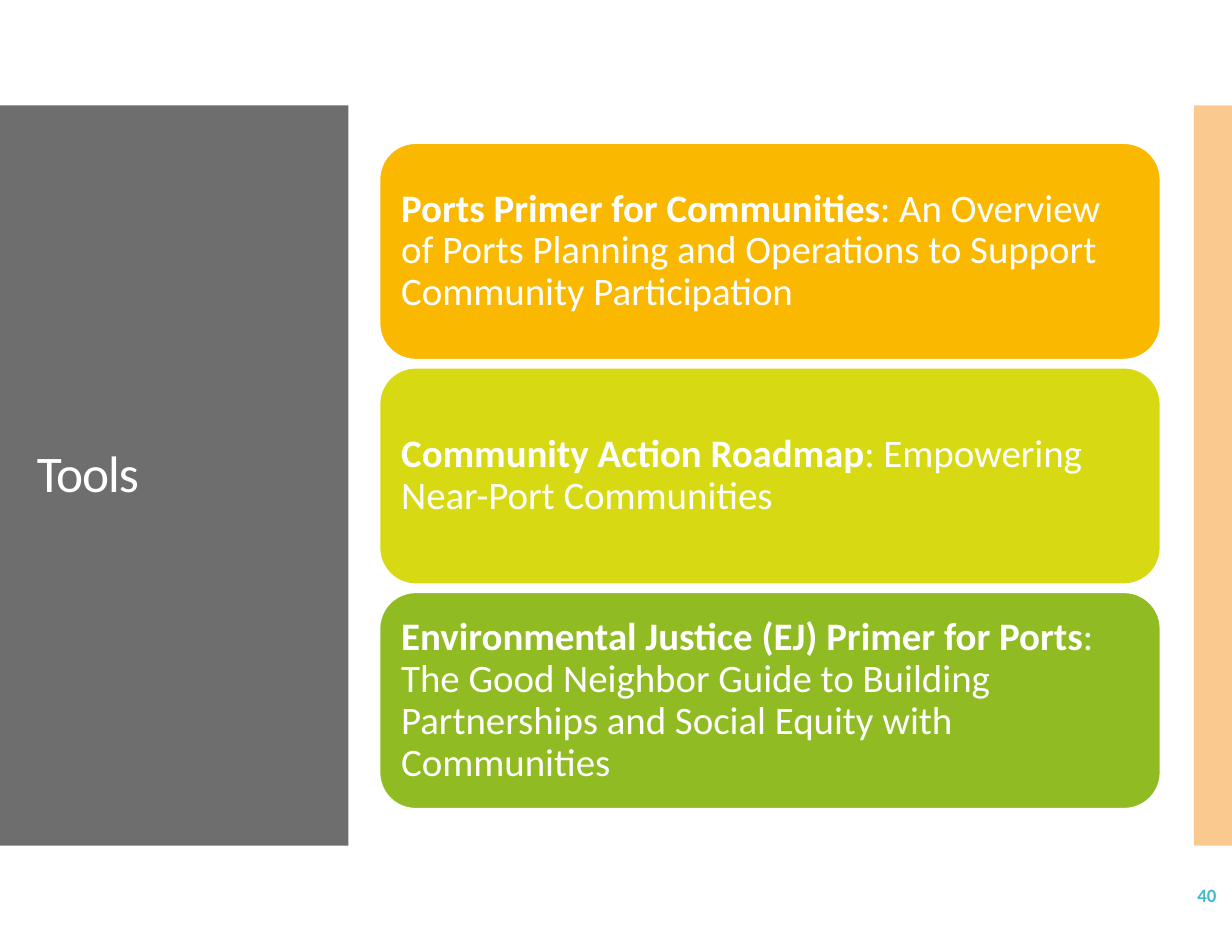
from lxml import etree
from pptx import Presentation
from pptx.dml.color import RGBColor
from pptx.enum.shapes import MSO_SHAPE
from pptx.enum.text import MSO_ANCHOR, PP_ALIGN
from pptx.oxml.ns import qn
from pptx.util import Inches, Pt

RECTANGLE, ROUNDED = MSO_SHAPE.RECTANGLE, MSO_SHAPE.ROUNDED_RECTANGLE
MIDDLE = MSO_ANCHOR.MIDDLE
LEFT, RIGHT = PP_ALIGN.LEFT, PP_ALIGN.RIGHT

WHITE = RGBColor(0xFF, 0xFF, 0xFF)
GREY = RGBColor(0x6E, 0x6E, 0x6E)
ORANGE = RGBColor(0xF7, 0x94, 0x21)
TEAL = RGBColor(0x40, 0xBA, 0xD2)
AMBER = RGBColor(0xFA, 0xB9, 0x00)
LIME = RGBColor(0xD7, 0xD9, 0x13)
GREEN = RGBColor(0x90, 0xBB, 0x23)
FONT = "Calibri"

TITLE = "Tools"
PAGE_NUMBER = "40"
TOOLS = [
    ("Ports Primer for Communities",
     ": An Overview of Ports Planning and Operations to Support "
     "Community Participation", AMBER),
    ("Community Action Roadmap",
     ": Empowering Near-Port Communities", LIME),
    ("Environmental Justice (EJ) Primer for Ports",
     ": The Good Neighbor Guide to Building Partnerships and Social "
     "Equity with Communities", GREEN),
]

SLIDE_W, SLIDE_H = 11, 8.5
BAND_TOP, BAND_H = 0.94, 6.61
PANEL_W, STRIP_W = 3.11, 0.34
CARD_LEFT, CARD_TOP, CARD_W, CARD_H = 3.39, 1.28, 6.97, 1.93
CARD_PITCH = 2.005


def write(frame, runs, size, color=WHITE, align=LEFT, spacing=None,
          tracking=None, inset=(0.1, 0.1)):
    """Fill a text frame with one paragraph of (text, bold) runs."""
    frame.word_wrap = True
    frame.vertical_anchor = MIDDLE
    frame.margin_left = frame.margin_right = Inches(inset[0])
    frame.margin_top = frame.margin_bottom = Inches(inset[1])
    paragraph = frame.paragraphs[0]
    paragraph.alignment = align
    if spacing:
        paragraph.line_spacing = spacing
    for text, bold in runs:
        run = paragraph.add_run()
        run.text = text
        run.font.name, run.font.size, run.font.bold = FONT, Pt(size), bold
        run.font.color.rgb = color
        if tracking:
            run._r.get_or_add_rPr().set("spc", str(round(tracking * 100)))


def add_block(slide, preset, box, fill, opacity=None):
    block = slide.shapes.add_shape(preset, *map(Inches, box))
    block.shadow.inherit = False
    block.fill.solid()
    block.fill.fore_color.rgb = fill
    block.line.fill.background()
    if opacity:
        color = block._element.spPr.find(qn("a:solidFill")).find(qn("a:srgbClr"))
        etree.SubElement(color, qn("a:alpha")).set("val", str(opacity * 1000))
    return block


def main():
    deck = Presentation()
    deck.slide_width, deck.slide_height = Inches(SLIDE_W), Inches(SLIDE_H)
    slide = deck.slides.add_slide(deck.slide_layouts[5])

    panel = add_block(slide, RECTANGLE, (0, BAND_TOP, PANEL_W, BAND_H), GREY)
    add_block(slide, RECTANGLE,
              (SLIDE_W - STRIP_W, BAND_TOP, STRIP_W, BAND_H), ORANGE, opacity=50)

    title = slide.shapes.title
    title.left, title.top = Inches(0.23), Inches(1.48)
    title.width, title.height = Inches(2.66), Inches(5.54)
    write(title.text_frame, [(TITLE, False)], 33, spacing=0.9, tracking=-0.7,
          inset=(0.1, 0.05))
    panel._element.getparent().append(title._element)

    page = slide.shapes.add_textbox(*map(Inches, (9.59, 7.77, 1.38, 0.44)))
    write(page.text_frame, [(PAGE_NUMBER, True)], 12.1, color=TEAL, align=RIGHT,
          inset=(0.11, 0.06))

    for row, (name, summary, fill) in enumerate(TOOLS):
        card = add_block(slide, ROUNDED,
                         (CARD_LEFT, CARD_TOP + row * CARD_PITCH, CARD_W, CARD_H), fill)
        card.line.color.rgb = WHITE
        card.line.width = Pt(0.85)
        write(card.text_frame, [(name, True), (summary, False)], 25, spacing=0.9)

    deck.save("out.pptx")


if __name__ == "__main__":
    main()
